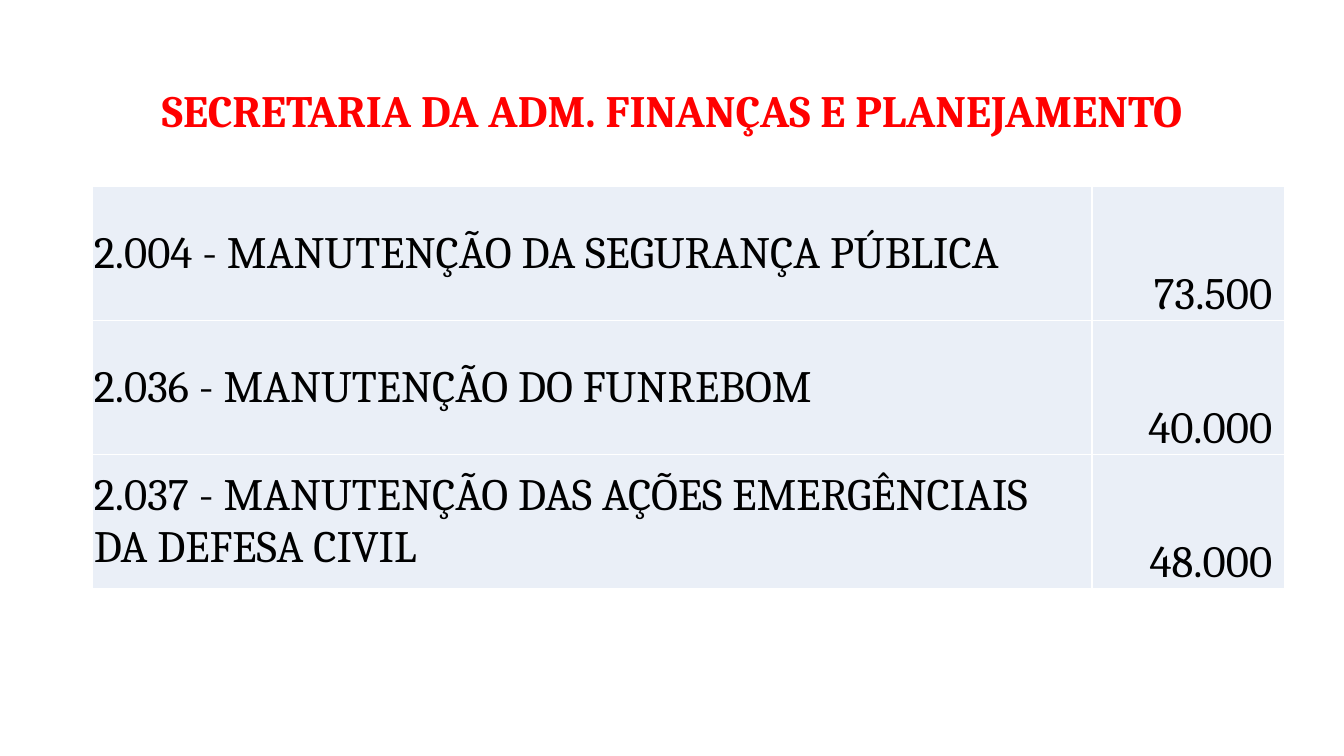
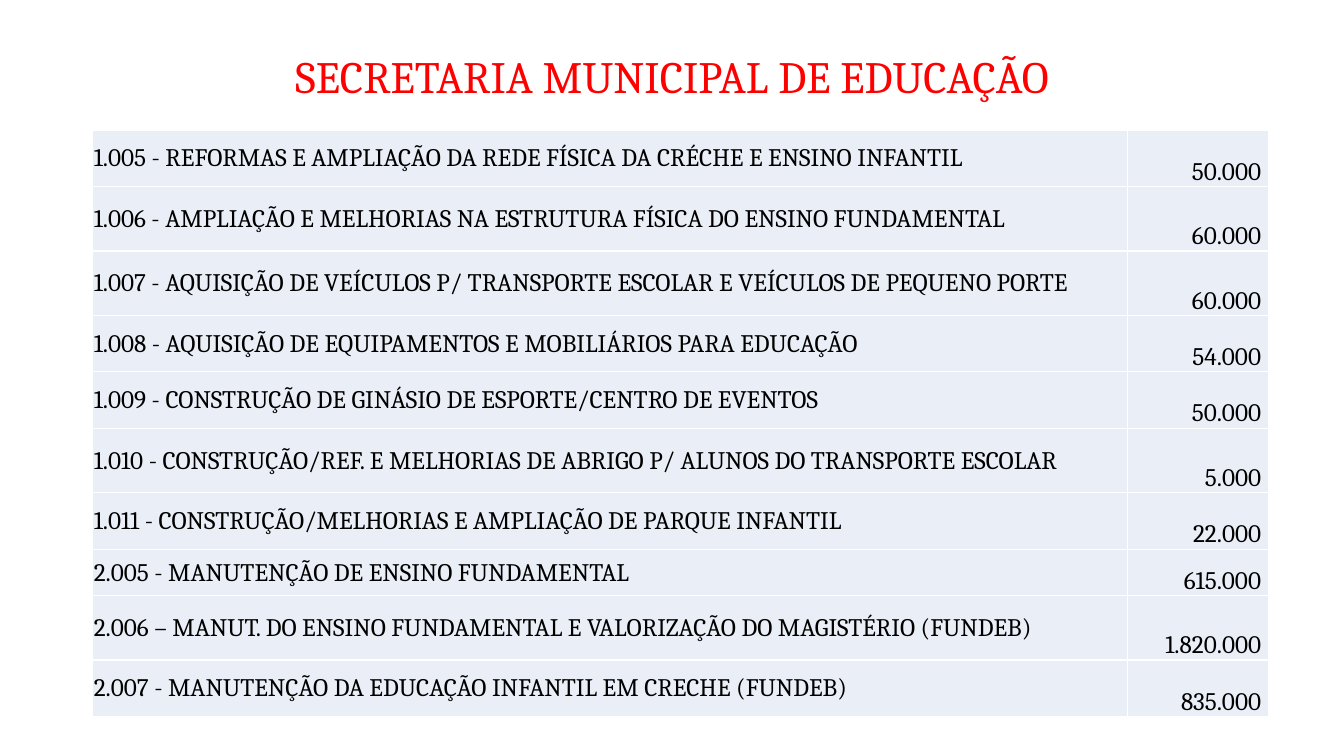
from lxml import etree
from pptx import Presentation
from pptx.dml.color import RGBColor
from pptx.enum.text import MSO_ANCHOR as ANCHOR, PP_ALIGN as ALIGN
from pptx.oxml.ns import qn
from pptx.util import Inches, Pt

RED = RGBColor(0xFF, 0x00, 0x00)
BLACK = RGBColor(0x00, 0x00, 0x00)
PALE_BLUE = RGBColor(0xEA, 0xEF, 0xF7)
WHITE = RGBColor(0xFF, 0xFF, 0xFF)
FONT = "Cambria"
LEFT, TITLE_TOP, TITLE_WIDTH = 0.92, 0.4, 11.5
TITLE_SIZE = 32
CELL_INSET = 0.01
LOW, MEDIUM, HIGH = 0.46, 0.56, 0.64

ADMIN_ROWS = [
    ("2.004 - MANUTENÇÃO DA SEGURANÇA PÚBLICA", "73.500", 1.33),
    ("2.036 - MANUTENÇÃO DO FUNREBOM", "40.000", 1.33),
    ("2.037 - MANUTENÇÃO DAS AÇÕES EMERGÊNCIAIS DA DEFESA CIVIL", "48.000", 1.33),
]
EDUCATION_ROWS = [
    ("1.005 - REFORMAS E AMPLIAÇÃO DA REDE FÍSICA DA CRÉCHE E ENSINO INFANTIL", "50.000", MEDIUM),
    ("1.006 - AMPLIAÇÃO E MELHORIAS NA ESTRUTURA FÍSICA DO ENSINO FUNDAMENTAL", "60.000", HIGH),
    ("1.007 - AQUISIÇÃO DE VEÍCULOS P/ TRANSPORTE ESCOLAR E VEÍCULOS DE PEQUENO PORTE", "60.000", HIGH),
    ("1.008 - AQUISIÇÃO DE EQUIPAMENTOS E MOBILIÁRIOS PARA EDUCAÇÃO", "54.000", MEDIUM),
    ("1.009 - CONSTRUÇÃO DE GINÁSIO DE ESPORTE/CENTRO DE EVENTOS", "50.000", MEDIUM),
    ("1.010 - CONSTRUÇÃO/REF. E MELHORIAS DE ABRIGO P/ ALUNOS DO TRANSPORTE ESCOLAR", "5.000", HIGH),
    ("1.011 - CONSTRUÇÃO/MELHORIAS E AMPLIAÇÃO DE PARQUE INFANTIL", "22.000", MEDIUM),
    ("2.005 - MANUTENÇÃO DE ENSINO FUNDAMENTAL", "615.000", LOW),
    ("2.006 – MANUT. DO ENSINO FUNDAMENTAL E VALORIZAÇÃO DO MAGISTÉRIO (FUNDEB)", "1.820.000", HIGH),
    ("2.007 - MANUTENÇÃO DA EDUCAÇÃO INFANTIL EM CRECHE (FUNDEB)", "835.000", MEDIUM),
]


def write(tf, text, size, color, align, bold=False):
    p = tf.paragraphs[0]
    p.alignment = align
    r = p.add_run()
    r.text = text
    r.font.name = FONT
    r.font.size = Pt(size)
    r.font.bold = bold
    r.font.color.rgb = color
    return p


def add_title(s, text, height, bold):
    title = s.shapes.title
    title.left, title.top = Inches(LEFT), Inches(TITLE_TOP)
    title.width, title.height = Inches(TITLE_WIDTH), Inches(height)
    tf = title.text_frame
    tf.word_wrap = True
    tf.vertical_anchor = ANCHOR.MIDDLE
    write(tf, text, TITLE_SIZE, RED, ALIGN.CENTER, bold).line_spacing = 0.9


def set_borders(cell):
    """Draw a thin white line on all four sides, ahead of the cell's fill."""
    tc_pr = cell._tc.get_or_add_tcPr()
    for i, side in enumerate(("lnL", "lnR", "lnT", "lnB")):
        ln = etree.Element(qn(f"a:{side}"), w=str(Pt(1)))
        fill = etree.SubElement(ln, qn("a:solidFill"))
        etree.SubElement(fill, qn("a:srgbClr"), val=str(WHITE))
        tc_pr.insert(i, ln)


def fill_cell(cell, text, size, is_amount):
    cell.fill.solid()
    cell.fill.fore_color.rgb = PALE_BLUE
    set_borders(cell)
    cell.margin_left = cell.margin_top = Inches(CELL_INSET)
    cell.margin_bottom = 0
    # Amounts stand about a quarter of their size away from the edge.
    gap = Pt(size / 4) if is_amount else 0
    cell.margin_right = Inches(CELL_INSET) + gap
    cell.vertical_anchor = ANCHOR.BOTTOM if is_amount else ANCHOR.MIDDLE
    write(cell.text_frame, text, size, BLACK, ALIGN.RIGHT if is_amount else ALIGN.LEFT)


def add_budget_table(s, top, col_widths, rows, size):
    height = sum(row_height for _, _, row_height in rows)
    table = s.shapes.add_table(len(rows), len(col_widths), Inches(LEFT), Inches(top),
                               Inches(sum(col_widths)), Inches(height)).table
    table.first_row = table.horz_banding = False
    for col, width in zip(table.columns, col_widths):
        col.width = Inches(width)
    for row, (action, amount, row_height) in zip(table.rows, rows):
        row.height = Inches(row_height)
        fill_cell(row.cells[0], action, size, False)
        fill_cell(row.cells[1], amount, size, True)


def add_budget_slide(prs, title, title_height, bold, top, col_widths, rows, size):
    s = prs.slides.add_slide(prs.slide_layouts.get_by_name("Title Only"))
    add_title(s, title, title_height, bold)
    add_budget_table(s, top, col_widths, rows, size)


def main():
    prs = Presentation()
    prs.slide_width, prs.slide_height = Inches(13.33), Inches(7.5)
    add_budget_slide(prs, "SECRETARIA DA ADM. FINANÇAS E PLANEJAMENTO", 1.45, True,
                     1.85, (9.91, 1.91), ADMIN_ROWS, 32)
    add_budget_slide(prs, "SECRETARIA MUNICIPAL DE EDUCAÇÃO", 0.77, False,
                     1.29, (10.26, 1.4), EDUCATION_ROWS, 18)
    prs.save("out.pptx")


if __name__ == "__main__":
    main()
